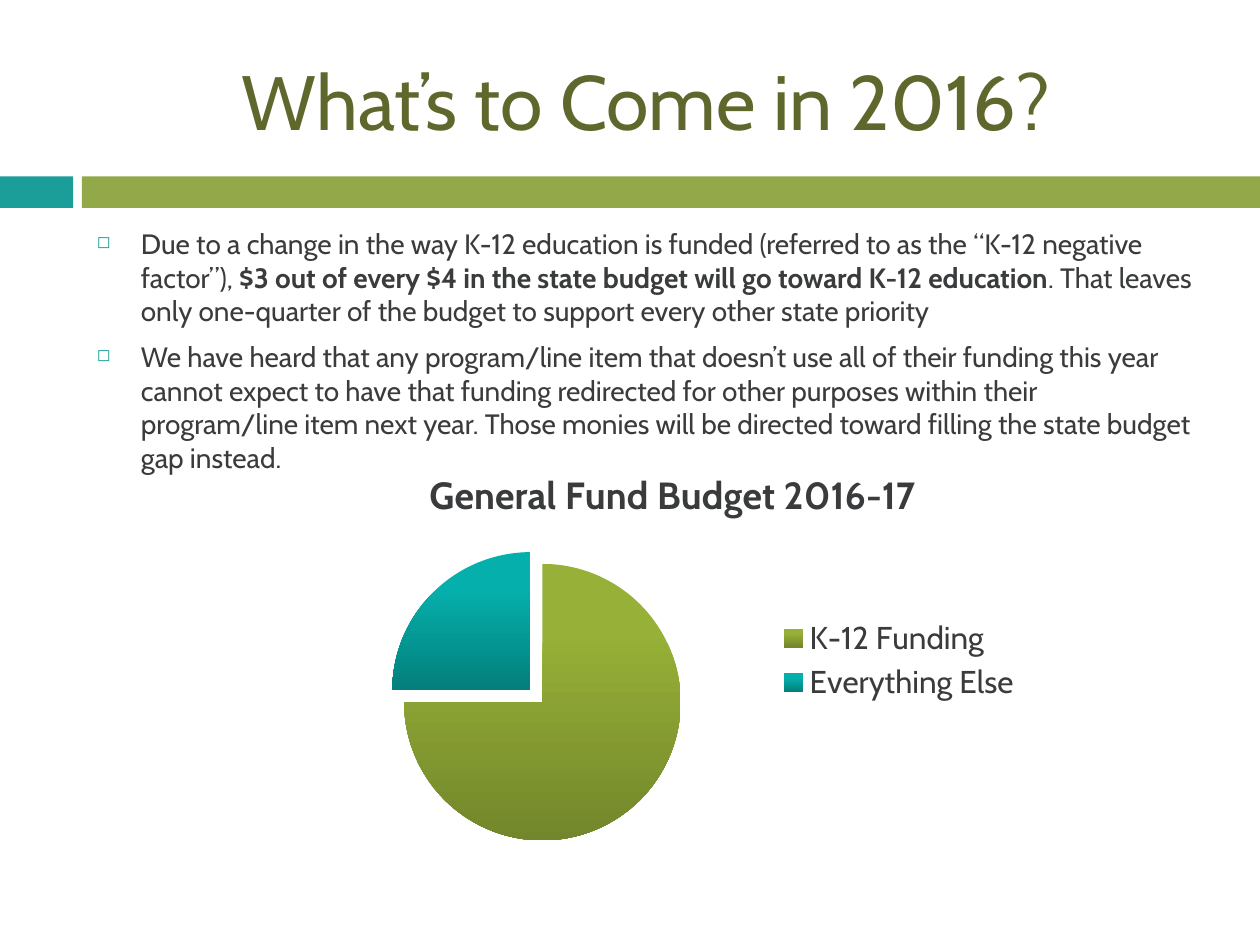
import pptx
import pptx.chart.data
import pptx.dml.color
import pptx.enum.chart
import pptx.enum.shapes
import pptx.enum.text
import pptx.oxml
import pptx.oxml.ns
import pptx.util
from pptx.util import Inches

RGBColor = pptx.dml.color.RGBColor
TEAL = RGBColor(0x1B, 0x9D, 0x9A)
GREEN = RGBColor(0x93, 0xA8, 0x49)
OLIVE = RGBColor(0x60, 0x67, 0x2C)
CHARCOAL = RGBColor(0x3A, 0x3B, 0x3C)
GREEN_SHADES = (RGBColor(0x97, 0xB0, 0x37), RGBColor(0x72, 0x86, 0x2B))
TEAL_SHADES = (RGBColor(0x05, 0xB0, 0xAC), RGBColor(0x04, 0x7F, 0x7C))

FONT = "Cabin"
CHART_TITLE = "General Fund Budget 2016-17"
BULLETS = [
    [
        ("Due to a change in the way K-12 education is funded (referred to as "
         "the “K-12 negative factor”), ", False),
        ("$3 out of every $4 in the state budget will go toward K-12 education", True),
        (". That leaves only one-quarter of the budget to support every other "
         "state priority", False),
    ],
    [
        ("We have heard that any program/line item that doesn’t use all of their "
         "funding this year cannot expect to have that funding redirected for other "
         "purposes within their program/line item next year. Those monies will be "
         "directed toward filling the state budget gap instead.", False),
    ],
]


def style_font(font, size, color=CHARCOAL, bold=False):
    font.name = FONT
    font.size = pptx.util.Pt(size)
    font.color.rgb = color
    font.bold = bold


def add_span(para, text, *, size, color=CHARCOAL, bold=False):
    span = para.add_run()
    span.text = text
    style_font(span.font, size, color, bold)


class SlideBuilder:
    def __init__(self, slide):
        self.slide = slide

    def bar(self, left, width, color):
        bar = self.slide.shapes.add_shape(
            pptx.enum.shapes.MSO_SHAPE.RECTANGLE,
            Inches(left), Inches(1.4), Inches(width), Inches(0.25))
        bar.shadow.inherit = False
        bar.fill.solid()
        bar.fill.fore_color.rgb = color
        bar.line.fill.background()

    def text_frame(self, top, height):
        box = self.slide.shapes.add_textbox(
            Inches(0.67), Inches(top), Inches(8.92), Inches(height))
        box.text_frame.word_wrap = True
        return box.text_frame

    def title(self, text):
        frame = self.text_frame(0.25, 1.08)
        frame.vertical_anchor = pptx.enum.text.MSO_ANCHOR.MIDDLE
        para = frame.paragraphs[0]
        para.alignment = pptx.enum.text.PP_ALIGN.CENTER
        add_span(para, text, size=44, color=OLIVE)

    def bullets(self, items):
        frame = self.text_frame(1.75, 4.95)
        for index, spans in enumerate(items):
            para = frame.add_paragraph() if index else frame.paragraphs[0]
            para.space_before = pptx.util.Pt(7)
            self.mark(para)
            for text, bold in spans:
                add_span(para, text, size=16, bold=bold)

    def mark(self, para):
        properties = para._p.get_or_add_pPr()
        properties.set("marL", str(Inches(0.35)))
        properties.set("indent", str(-Inches(0.35)))
        namespace = pptx.oxml.ns.nsdecls("a")
        for markup in (
            f'<a:buClr {namespace}><a:srgbClr val="{TEAL}"/></a:buClr>',
            f'<a:buSzPct {namespace} val="60000"/>',
            f'<a:buChar {namespace} char="◻"/>',
        ):
            properties.append(pptx.oxml.parse_xml(markup))

    def pie(self, title, categories, values, shades):
        data = pptx.chart.data.CategoryChartData()
        data.categories = categories
        data.add_series(title, values)
        chart = self.slide.shapes.add_chart(
            pptx.enum.chart.XL_CHART_TYPE.PIE,
            Inches(2.47), Inches(3.54), Inches(5.74), Inches(3.4), data).chart
        style_font(chart.font, 18)
        chart.has_title = True
        add_span(chart.chart_title.text_frame.paragraphs[0], title, size=21.6, bold=True)
        chart.has_legend = True
        chart.legend.position = pptx.enum.chart.XL_LEGEND_POSITION.RIGHT
        chart.legend.include_in_layout = False
        style_font(chart.legend.font, 18)
        plot = chart.plots[0]
        plot.vary_by_categories = True
        for index, colors in enumerate(shades):
            point = plot.series[0].points[index]
            fill = point.format.fill
            fill.gradient()
            fill.gradient_angle = 270
            for stop, color, position in zip(fill.gradient_stops, colors, (0.25, 1)):
                stop.color.rgb = color
                stop.position = position
            point.format.line.fill.background()
        # Pull the last slice out
        last_point = plot.series[0]._element.findall(pptx.oxml.ns.qn("c:dPt"))[-1]
        explosion = pptx.oxml.parse_xml(
            f'<c:explosion {pptx.oxml.ns.nsdecls("c")} val="12"/>')
        last_point.find(pptx.oxml.ns.qn("c:spPr")).addprevious(explosion)


def main():
    deck = pptx.Presentation()
    deck.slide_width, deck.slide_height = Inches(10), Inches(7.5)
    page = SlideBuilder(deck.slides.add_slide(deck.slide_layouts[6]))

    # Header band
    page.bar(0, 0.58, TEAL)
    page.bar(0.65, 9.35, GREEN)

    # Text
    page.title("What’s to Come in 2016?")
    page.bullets(BULLETS)

    # Budget split
    page.pie(CHART_TITLE, ["K-12 Funding", "Everything Else"], (75, 25),
             (GREEN_SHADES, TEAL_SHADES))

    deck.save("out.pptx")


if __name__ == "__main__":
    main()
